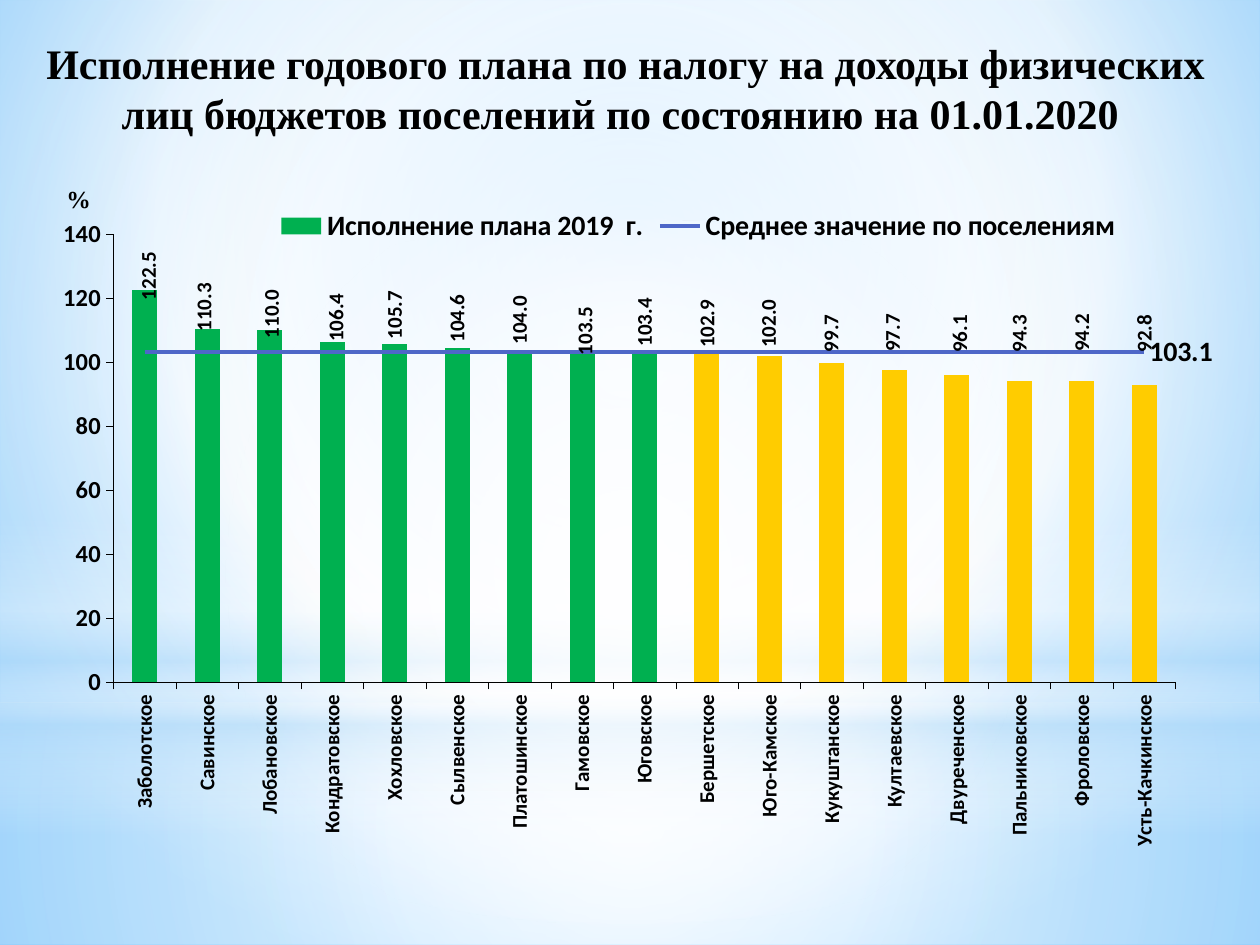
from lxml.etree import SubElement
from pptx import Presentation
from pptx.chart.data import CategoryChartData
from pptx.dml.color import RGBColor
from pptx.enum.chart import (XL_CHART_TYPE, XL_LABEL_POSITION, XL_LEGEND_POSITION,
                             XL_TICK_LABEL_POSITION, XL_TICK_MARK)
from pptx.enum.shapes import MSO_SHAPE
from pptx.enum.text import PP_ALIGN
from pptx.oxml import parse_xml
from pptx.oxml.ns import nsdecls, qn
from pptx.util import Pt

PX = 914400 / 126
GREEN, YELLOW, BLUE, BLACK = "00B050", "FFCC00", "4E67C8", "000000"
CHART_BOX = (39, 165, 1221, 764)
RESULTS = {
    "Заболотское": 122.5, "Савинское": 110.3, "Лобановское": 110,
    "Кондратовское": 106.4, "Хохловское": 105.7, "Сылвенское": 104.6,
    "Платошинское": 104, "Гамовское": 103.5, "Юговское": 103.4,
    "Бершетское": 102.9, "Юго-Камское": 102, "Кукуштанское": 99.7,
    "Култаевское": 97.7, "Двуреченское": 96.1, "Пальниковское": 94.3,
    "Фроловское": 94.2, "Усть-Качкинское": 92.8,
}
AVERAGE = 103.1
# Shifts of bar labels in px, by bar index
LABEL_SHIFTS = {0: (4, 15), 1: (-3, 7), 2: (2, 13), 3: (4, 5), 7: (3, 9),
                10: (-1, -3), 11: (-1, -6), 12: (-2, -13), 13: (3, -17),
                14: (0, -23), 15: (0, -24), 16: (0, -28)}


def emu(*lengths):
    return [round(length * PX) for length in lengths]


def rgb(color):
    return RGBColor.from_string(color)


def set_font(font, size, name="Calibri"):
    font.size, font.name, font.bold = Pt(size), name, True
    font.color.rgb = rgb(BLACK)


def gradient(stops, center=None):
    """Gradient fill from (position, colour, opacity) stops; vertical without a center."""
    marks = "".join(
        f'<a:gs pos="{position * 1000}"><a:srgbClr val="{color}">'
        f'<a:alpha val="{opacity * 1000}"/></a:srgbClr></a:gs>'
        for position, color, opacity in stops)
    if center:
        sides = " ".join(f'{side}="{value * 1000}"' for side, value in zip("ltrb", center))
        way = f'<a:path path="circle"><a:fillToRect {sides}/></a:path>'
    else:
        way = '<a:lin ang="5400000" scaled="0"/>'
    return parse_xml(f'<a:gradFill {nsdecls("a")} rotWithShape="1">'
                     f'<a:gsLst>{marks}</a:gsLst>{way}</a:gradFill>')


def set_background(page, fill):
    page.background.fill.solid()
    properties = page.background._cSld.bg.bgPr
    properties.replace(properties[0], fill)


def add_glow(page, kind, box, fill):
    shape = page.shapes.add_shape(kind, *emu(*box))
    shape.shadow.inherit = False
    shape.line.fill.background()
    shape.fill.solid()
    properties = shape._element.spPr
    properties.replace(properties.find(qn("a:solidFill")), fill)


def add_text(page, box, text, size, align=PP_ALIGN.LEFT, top_inset=6):
    frame = page.shapes.add_textbox(*emu(*box)).text_frame
    frame.word_wrap = True
    frame.margin_top = emu(top_inset)[0]
    para = frame.paragraphs[0]
    para.text, para.alignment = text, align
    set_font(para.font, size, "Times New Roman")


def turn_upright(element):
    body = element.find(qn("c:txPr")).find(qn("a:bodyPr"))
    body.set("rot", "-5400000")
    body.set("vert", "horz")


def remove_children(parent, tag):
    for child in parent.findall(qn(tag)):
        parent.remove(child)


def manual_layout(**values):
    items = "".join(f'<c:{key} val="{value}"/>' for key, value in values.items())
    return parse_xml(f'<c:layout {nsdecls("c")}><c:manualLayout>{items}'
                     '</c:manualLayout></c:layout>')


def format_axis(axis, size):
    set_font(axis.tick_labels.font, size)
    axis.format.line.color.rgb = rgb(BLACK)
    axis.format.line.width = Pt(0.25)
    axis.has_major_gridlines = False
    axis.major_tick_mark = XL_TICK_MARK.OUTSIDE
    axis.minor_tick_mark = XL_TICK_MARK.NONE


def format_bars(series):
    series.format.fill.solid()
    series.format.fill.fore_color.rgb = rgb(GREEN)
    for index, value in enumerate(series.values):
        if value < AVERAGE:
            fill = series.points[index].format.fill
            fill.solid()
            fill.fore_color.rgb = rgb(YELLOW)

    labels = series.data_labels
    labels.show_value = True
    labels.number_format, labels.number_format_is_linked = "#,##0.0", False
    labels.position = XL_LABEL_POSITION.OUTSIDE_END
    set_font(labels.font, 12)
    for index in LABEL_SHIFTS:
        label = series.points[index].data_label
        set_font(label.font, 12)
        label.position = XL_LABEL_POSITION.OUTSIDE_END
    group = series._element.find(qn("c:dLbls"))
    turn_upright(group)
    for item in group.findall(qn("c:dLbl")):
        turn_upright(item)
        right, down = LABEL_SHIFTS[int(item.find(qn("c:idx")).get("val"))]
        number_format = parse_xml(f'<c:numFmt {nsdecls("c")} formatCode="#,##0.0" sourceLinked="0"/>')
        item.insert(1, manual_layout(x=round(right / CHART_BOX[2], 4),
                                     y=round(down / CHART_BOX[3], 4)))
        item.insert(2, number_format)


def move_to_line(chart):
    """Take the second series out of the columns into a line on the same axes."""
    columns = chart._chartSpace.find(".//" + qn("c:barChart"))
    series = columns.findall(qn("c:ser"))[1]
    remove_children(series, "c:invertIfNegative")
    line = parse_xml(f'<c:lineChart {nsdecls("c")}><c:grouping val="standard"/>'
                     '<c:varyColors val="0"/></c:lineChart>')
    line.append(series)
    SubElement(line, qn("c:marker")).set("val", "1")
    for axis in columns.findall(qn("c:axId")):
        SubElement(line, qn("c:axId")).set("val", axis.get("val"))
    columns.addnext(line)


def format_average(series):
    series.smooth = False
    series.format.line.color.rgb = rgb(BLUE)
    series.format.line.width = Pt(2.25)
    SubElement(series._element.get_or_add_marker(), qn("c:symbol")).set("val", "none")
    series.data_labels.show_value = False
    label = series.points[len(RESULTS) - 1].data_label
    set_font(label.font, 16)
    label.position = XL_LABEL_POSITION.RIGHT


def add_results_chart(page):
    data = CategoryChartData()
    data.categories = list(RESULTS)
    data.add_series("Исполнение плана 2019  г. ", list(RESULTS.values()))
    data.add_series("Среднее значение по поселениям", [AVERAGE] * len(RESULTS))
    chart = page.shapes.add_chart(XL_CHART_TYPE.COLUMN_CLUSTERED, *emu(*CHART_BOX), data).chart
    chart.has_title = False
    set_font(chart.font, 18)

    # Columns and the average line
    move_to_line(chart)
    columns, line = chart.plots
    columns.gap_width, columns.vary_by_categories = 150, False
    format_bars(columns.series[0])
    format_average(line.series[0])

    # Axes
    format_axis(chart.category_axis, 12)
    chart.category_axis.tick_label_position = XL_TICK_LABEL_POSITION.LOW
    turn_upright(chart.category_axis._element)
    values = chart.value_axis
    format_axis(values, 14)
    values.minimum_scale, values.maximum_scale, values.major_unit = 0, 140, 20
    values.tick_labels.number_format = "0"
    values.tick_labels.number_format_is_linked = False

    # Legend and plot placement
    chart.has_legend = True
    legend = chart.legend
    legend.position, legend.include_in_layout = XL_LEGEND_POSITION.BOTTOM, False
    set_font(legend.font, 16)
    place = dict(xMode="edge", yMode="edge")
    remove_children(legend._element, "c:layout")
    legend._element.find(qn("c:legendPos")).addnext(
        manual_layout(**place, x=0.19, y=0.05, w=0.7, h=0.06))
    area = chart._chartSpace.find(".//" + qn("c:plotArea"))
    remove_children(area, "c:layout")
    area.insert(0, manual_layout(layoutTarget="inner", **place, x=0.061, y=0.091, w=0.87, h=0.586))


def main():
    deck = Presentation()
    deck.slide_width, deck.slide_height = emu(1260, 945)
    page = deck.slides.add_slide(deck.slide_layouts[6])

    # Backdrop of soft glows
    middle = (50, 50, 50, 50)
    white, sky = "FFFFFF", "B4DCFA"
    set_background(page, gradient([(0, "9ED5FF", 100), (60, white, 100), (100, "5BB9FF", 100)],
                                  (20, 10, 20, 60)))
    add_glow(page, MSO_SHAPE.RECTANGLE, (0, 703, 1260, 242),
             gradient([(0, white, 91), (37, white, 76), (100, sky, 79)], middle))
    add_glow(page, MSO_SHAPE.RECTANGLE, (0, 0, 1260, 703),
             gradient([(0, white, 89), (48, white, 62), (100, sky, 79)], middle))
    add_glow(page, MSO_SHAPE.RECTANGLE, (0, 519, 1260, 315),
             gradient([(0, white, 0), (29, white, 30), (45, sky, 40),
                       (55, white, 26), (65, sky, 60), (100, white, 0)]))
    add_glow(page, MSO_SHAPE.OVAL, (0, 220, 1260, 703),
             gradient([(0, white, 100), (56, white, 0)], middle))

    # Title, chart and unit
    add_text(page, (25, 26, 1201, 68),
             "Исполнение годового плана по налогу на доходы физических лиц "
             "бюджетов поселений по состоянию на 01.01.2020 ", 24, PP_ALIGN.CENTER, 11)
    add_results_chart(page)
    add_text(page, (54, 178, 69, 43), "%", 14)
    deck.save("out.pptx")


if __name__ == "__main__":
    main()
